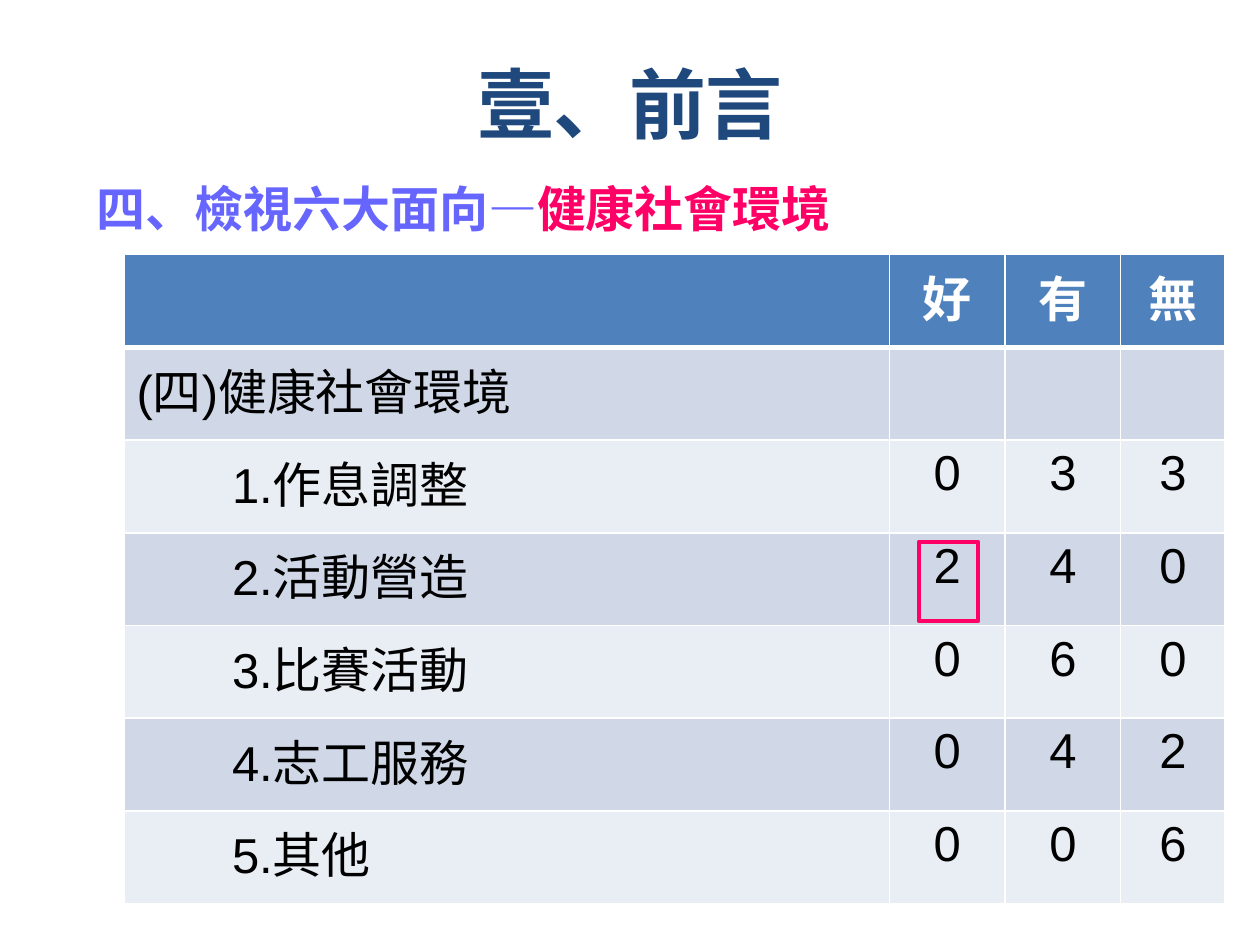
from lxml import etree
from pptx import Presentation
from pptx.dml.color import RGBColor
from pptx.enum import shapes, text
from pptx.oxml.ns import qn
from pptx.util import Pt

TITLE = "壹、前言"
SUBTITLE = [("四、檢視六大面向—", "6666FF"), ("健康社會環境", "FF0066")]
HEADER = ["", "好", "有", "無"]
SECTION = ["(四)健康社會環境", "", "", ""]
ITEMS = [
    ["1.作息調整", "0", "3", "3"],
    ["2.活動營造", "2", "4", "0"],
    ["3.比賽活動", "0", "6", "0"],
    ["4.志工服務", "0", "4", "2"],
    ["5.其他", "0", "0", "6"],
]
COLUMN_WIDTHS = [437.4, 66.1, 66.1, 59.6]
ROW_HEIGHT = 53
ITEM_INDENT = 61.7
BANDS = ["E9EDF4", "D0D8E8"]


def rgb(value):
    return RGBColor.from_string(value)


def style(run, font, size, color, bold):
    run.font.name = font
    run.font.size = Pt(size)
    run.font.bold = bold
    run.font.color.rgb = rgb(color)


def add_text(slide, box, parts, size, anchor):
    frame = slide.shapes.add_textbox(*map(Pt, box)).text_frame
    frame.word_wrap = True
    frame.vertical_anchor = anchor
    paragraph = frame.paragraphs[0]
    for words, color in parts:
        run = paragraph.add_run()
        run.text = words
        style(run, "Times New Roman", size, color, True)
    return paragraph


def add_borders(cell, bottom_width):
    properties = cell._tc.get_or_add_tcPr()
    widths = {"lnL": 1, "lnR": 1, "lnT": 1, "lnB": bottom_width}
    for position, (side, width) in enumerate(widths.items()):
        line = etree.Element(qn("a:" + side), w=str(Pt(width)))
        fill = etree.SubElement(line, qn("a:solidFill"))
        etree.SubElement(fill, qn("a:srgbClr"), val="FFFFFF")
        properties.insert(position, line)


def fill_cell(cell, words, row, column):
    is_header = row == 0
    cell.fill.solid()
    cell.fill.fore_color.rgb = rgb("4F81BD" if is_header else BANDS[row % 2])
    add_borders(cell, 3 if is_header else 1)
    if row > 1 and column == 0:
        cell.margin_left = Pt(ITEM_INDENT)
    cell.text_frame.text = words
    paragraph = cell.text_frame.paragraphs[0]
    paragraph.font.size = Pt(28)
    if column:
        paragraph.alignment = text.PP_ALIGN.CENTER
    for run in paragraph.runs:
        style(run, "Arial", 28, "FFFFFF" if is_header else "000000", is_header)


def main():
    deck = Presentation()
    deck.slide_width, deck.slide_height = Pt(720), Pt(540)
    slide = deck.slides.add_slide(deck.slide_layouts[6])

    title = add_text(slide, (20, 23, 680.4, 65.5), [(TITLE, "1F497D")], 44,
                     text.MSO_ANCHOR.BOTTOM)
    title.alignment = text.PP_ALIGN.CENTER
    title.runs[0].font._element.set("spc", "-60")

    subtitle = add_text(slide, (48.2, 88.6, 550, 56.9), SUBTITLE, 28,
                        text.MSO_ANCHOR.TOP)
    subtitle.line_spacing = 1.3

    rows = [HEADER, SECTION] + ITEMS
    table = slide.shapes.add_table(
        len(rows), len(HEADER), Pt(70.9), Pt(145.5),
        Pt(sum(COLUMN_WIDTHS)), Pt(ROW_HEIGHT * len(rows))).table
    for column, width in zip(table.columns, COLUMN_WIDTHS):
        column.width = Pt(width)
    for row, entries in enumerate(rows):
        table.rows[row].height = Pt(ROW_HEIGHT)
        for column, words in enumerate(entries):
            fill_cell(table.cell(row, column), words, row, column)

    highlight = slide.shapes.add_shape(
        shapes.MSO_SHAPE.RECTANGLE, Pt(525), Pt(309.6), Pt(34), Pt(45.4))
    highlight.shadow.inherit = False
    highlight.fill.background()
    highlight.line.color.rgb = rgb("FF0066")
    highlight.line.width = Pt(2.25)

    deck.save("out.pptx")


if __name__ == "__main__":
    main()
